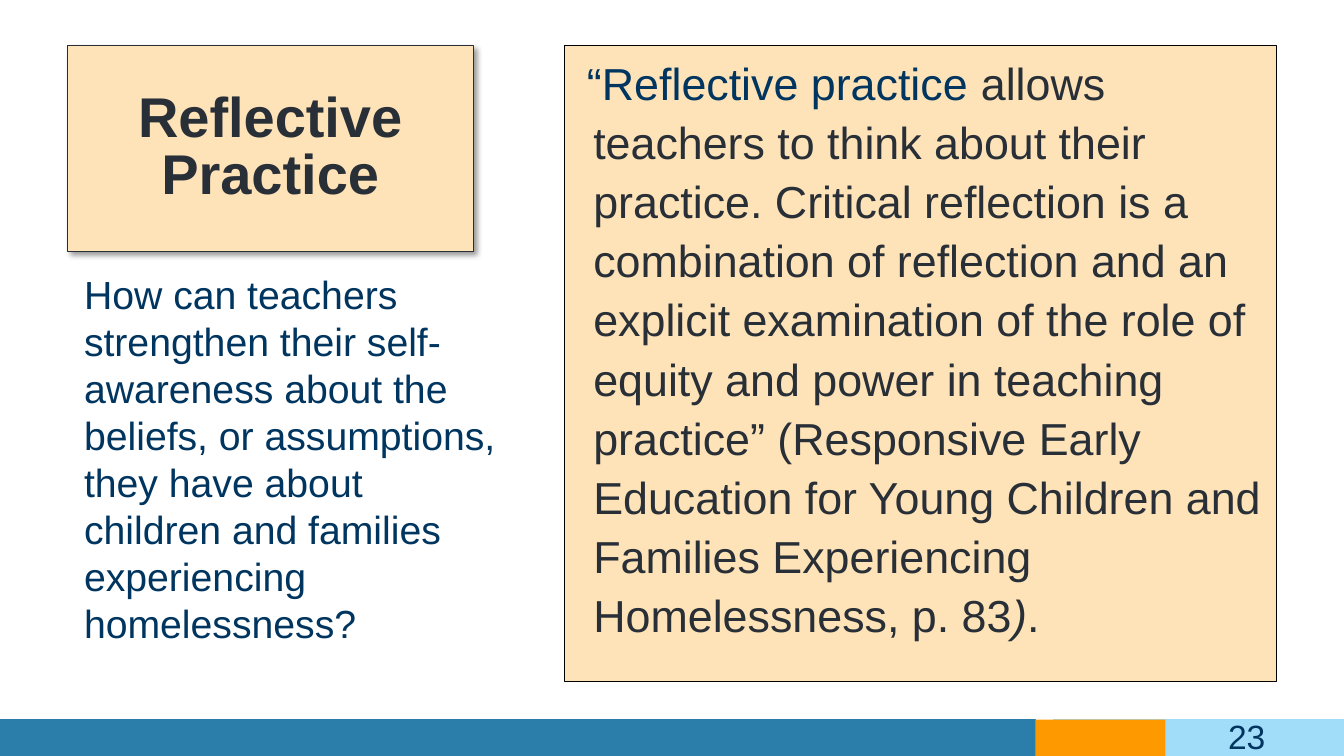
from dataclasses import dataclass

from lxml import etree
from pptx import Presentation
from pptx.dml.color import RGBColor
from pptx.enum.shapes import MSO_SHAPE
from pptx.enum.text import MSO_ANCHOR, MSO_AUTO_SIZE, PP_ALIGN
from pptx.oxml.ns import qn
from pptx.util import Pt

RECTANGLE = MSO_SHAPE.RECTANGLE
TOP, MIDDLE = MSO_ANCHOR.TOP, MSO_ANCHOR.MIDDLE
LEFT, CENTER, RIGHT = PP_ALIGN.LEFT, PP_ALIGN.CENTER, PP_ALIGN.RIGHT


@dataclass(frozen=True)
class Theme:
    font: str = "Arial"
    navy: str = "00355F"
    ink: str = "292F37"
    panel: str = "FEE3B8"
    outline: str = "282F37"
    black: str = "000000"
    blue: str = "2A7EA9"
    sky: str = "A1DCF8"
    orange: str = "FF9900"
    title_size: int = 40
    quote_size: int = 32
    question_size: int = 28
    number_size: int = 24


theme = Theme()


def paint(shape, fill, line=None, width=1):
    shape.shadow.inherit = False
    shape.fill.solid()
    shape.fill.fore_color.rgb = RGBColor.from_string(fill)
    if line:
        shape.line.color.rgb = RGBColor.from_string(line)
        shape.line.width = Pt(width)
    else:
        shape.line.fill.background()


def write(shape, spans, size, align=LEFT, anchor=TOP, bold=False):
    frame = shape.text_frame
    frame.word_wrap = True
    frame.auto_size = MSO_AUTO_SIZE.NONE
    frame.vertical_anchor = anchor
    para = frame.paragraphs[0]
    para.alignment = align
    for text, color, italic in spans:
        span = para.add_run()
        span.text = text
        span.font.name = theme.font
        span.font.size = Pt(size)
        span.font.bold = bold
        span.font.italic = italic
        span.font.color.rgb = RGBColor.from_string(color)
    return para


deck = Presentation()
deck.slide_width, deck.slide_height = Pt(960), Pt(540)
page = deck.slides.add_slide(deck.slide_layouts[5])
shapes = page.shapes

# Footer band
for left, width, fill, line in (
    (0, 739.5, theme.blue, theme.blue),
    (753, 207, theme.sky, theme.sky),
    (739.5, 93, theme.orange, None),
):
    band = shapes.add_shape(RECTANGLE, Pt(left), Pt(514), Pt(width), Pt(26))
    paint(band, fill, line)

# Quotation panel
quote = shapes.add_shape(RECTANGLE, Pt(403), Pt(32.4), Pt(508.5), Pt(454.5))
paint(quote, theme.panel, theme.black, 0.75)
quote_para = write(quote, (
    ("“Reflective practice ", theme.navy, False),
    ("allows teachers to think about their practice. Critical reflection is "
     "a combination of reflection and an explicit examination of the role of "
     "equity and power in teaching practice” (Responsive Early Education for "
     "Young Children and Families Experiencing Homelessness, p. 83",
     theme.ink, False),
    (")", theme.ink, True),
    (".", theme.ink, False),
), theme.quote_size)
quote_para.line_spacing = 1.1
indents = quote_para._p.get_or_add_pPr()
indents.set("marL", str(Pt(13.7)))
indents.set("indent", str(Pt(-4.5)))

# Title card with a soft shadow
title = shapes.title
title.left, title.top, title.width, title.height = Pt(48), Pt(32.4), Pt(290), Pt(147.5)
paint(title, theme.panel, theme.outline, 0.75)
title_para = write(title, (("Reflective Practice", theme.ink, False),),
                   theme.title_size, CENTER, MIDDLE, bold=True)
title_para.line_spacing = 0.85
effects = title._element.spPr.find(qn("a:effectLst"))
shadow = etree.SubElement(effects, qn("a:outerShdw"), blurRad=str(Pt(4)),
                          dist=str(Pt(3)), dir="2700000", algn="tl")
shadow_color = etree.SubElement(shadow, qn("a:srgbClr"), val=theme.black)
etree.SubElement(shadow_color, qn("a:alpha"), val="40000")

# Question under the title
question = shapes.add_textbox(Pt(48), Pt(189.5), Pt(323.5), Pt(309.5))
question_para = write(question, ((
    "How can teachers strengthen their self-awareness about the beliefs, or "
    "assumptions, they have about children and families experiencing "
    "homelessness?", theme.navy, False),), theme.question_size)
question_para._p.get_or_add_pPr().set("marL", str(Pt(5)))

# Page number
number = shapes.add_textbox(Pt(695), Pt(511.5), Pt(216), Pt(28.5))
write(number, (("23", theme.navy, False),), theme.number_size, RIGHT, MIDDLE)

deck.save("out.pptx")
